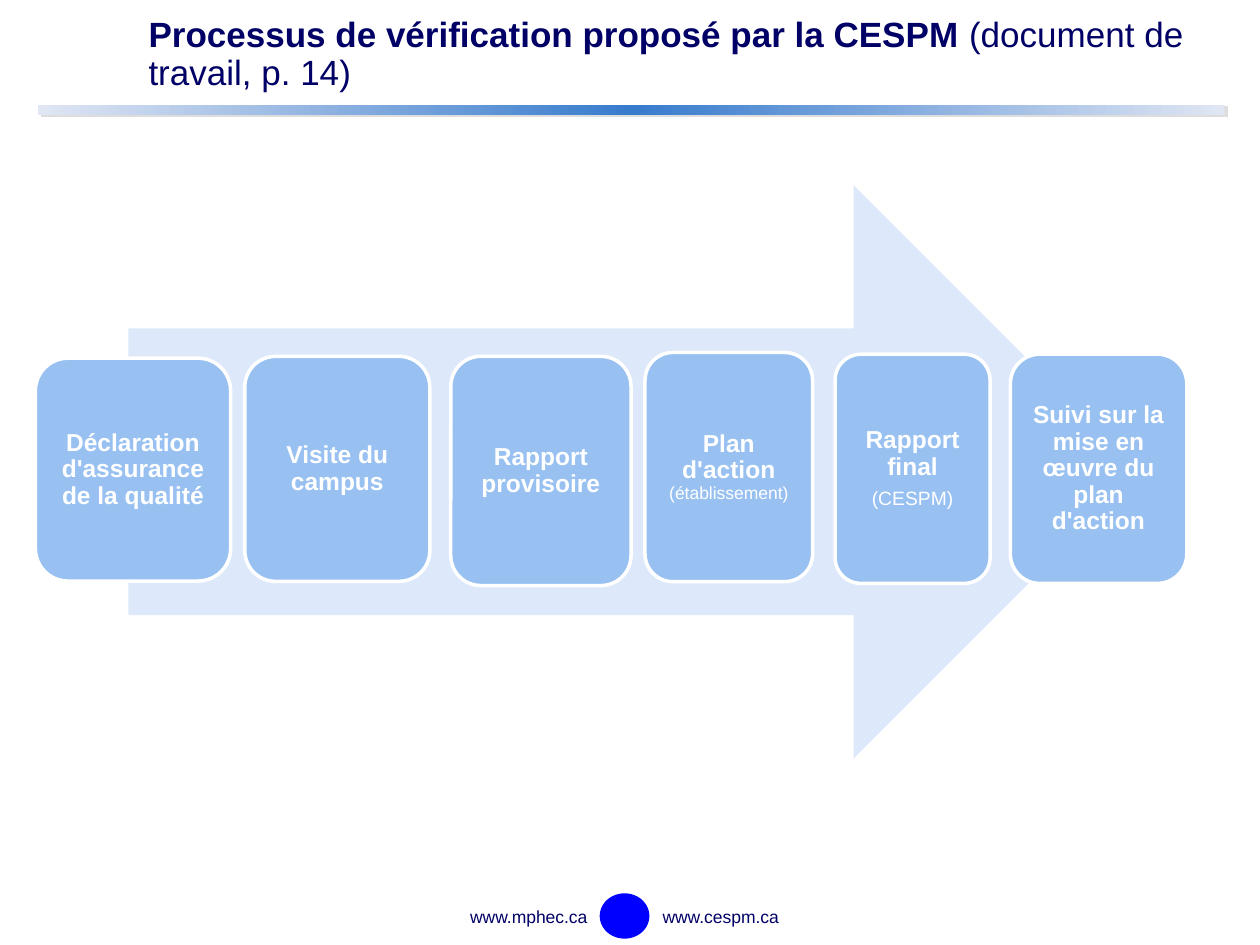
from copy import deepcopy
from dataclasses import dataclass

from lxml.etree import SubElement
from pptx import Presentation
from pptx.dml.color import RGBColor
from pptx.enum.shapes import MSO_SHAPE
from pptx.enum.text import MSO_ANCHOR, PP_ALIGN
from pptx.oxml.ns import qn
from pptx.util import Pt


@dataclass(frozen=True)
class Theme:
    font: str = "Arial"
    navy: str = "000066"
    white: str = "FFFFFF"
    arrow: str = "DDE9FA"
    step: str = "98C1F2"
    emblem: str = "0000FF"
    bar_edge: str = "E0E6F3"
    bar_middle: str = "377BCD"
    bar_shadow: str = "DDDDDD"
    title_size: float = 20
    step_size: float = 14
    note_size: float = 11
    small_size: float = 10


T = Theme()

# Left, top, width, height in points, then paragraphs of (text, size, bold) runs
STEPS = [
    ((20.2, 204.7, 111.6, 127.4),
     [[("Déclaration d'assurance de la qualité", T.step_size, True)]]),
    ((139.9, 203.6, 105.8, 128.6),
     [[("Visite du campus", T.step_size, True)]]),
    ((257.6, 203.6, 103, 131),
     [[("Rapport provisoire", T.step_size, True)]]),
    ((368.6, 201.4, 95.8, 131),
     [[("Plan d'action ", T.step_size, True),
       ("(établissement)", T.small_size, False)]]),
    ((477.2, 202.4, 88.6, 131),
     [[("Rapport final", T.step_size, True)],
      [("(CESPM)", T.note_size, False)]]),
    ((577.4, 202.4, 100.8, 131),
     [[("Suivi sur la mise en œuvre du plan d'action", T.step_size, True)]]),
]


def rgb(value):
    return RGBColor.from_string(value)


def write(tf, paragraphs, color, align=PP_ALIGN.LEFT, spacing=1.0, gap=0):
    """Fill a text frame; gap separates consecutive paragraphs."""
    tf.word_wrap = True
    for i, runs in enumerate(paragraphs):
        p = tf.add_paragraph() if i else tf.paragraphs[0]
        p.alignment = align
        p.line_spacing = spacing
        if i < len(paragraphs) - 1:
            p.space_after = Pt(gap)
        for text, size, bold in runs:
            r = p.add_run()
            r.text = text
            r.font.name = T.font
            r.font.size = Pt(size)
            r.font.bold = bold
            r.font.color.rgb = rgb(color)


def add_text(slide, box, paragraphs, **style):
    s = slide.shapes.add_textbox(*map(Pt, box))
    write(s.text_frame, paragraphs, T.navy, **style)
    return s


def add_block(slide, kind, box, fill, line=None):
    s = slide.shapes.add_shape(kind, *map(Pt, box))
    s.shadow.inherit = False
    s.fill.solid()
    s.fill.fore_color.rgb = rgb(fill)
    if line:
        s.line.color.rgb = rgb(line)
        s.line.width = Pt(2)
    else:
        s.line.fill.background()
    return s


def add_step(slide, box, paragraphs):
    s = add_block(slide, MSO_SHAPE.ROUNDED_RECTANGLE, box, T.step, T.white)
    tf = s.text_frame
    tf.margin_left = tf.margin_right = Pt(4.2)
    tf.margin_top = tf.margin_bottom = Pt(4.2)
    tf.vertical_anchor = MSO_ANCHOR.MIDDLE
    write(tf, paragraphs, T.white, PP_ALIGN.CENTER, 0.9, 5)


def add_gradient_bar(slide, box):
    s = add_block(slide, MSO_SHAPE.RECTANGLE, box, T.bar_middle)
    s.fill.gradient()
    s.fill.gradient_angle = 0
    stops = s.fill.gradient_stops
    for stop, color, position in zip(stops, (T.bar_edge, T.bar_middle), (0, 0.5)):
        stop.color.rgb = rgb(color)
        stop.position = position
    # Third stop mirrors the first
    gs_list = s._element.spPr.find(".//" + qn("a:gsLst"))
    last = deepcopy(gs_list[0])
    last.set("pos", "100000")
    gs_list.append(last)
    # Hard offset shadow
    effects = s._element.spPr.find(qn("a:effectLst"))
    shadow = SubElement(effects, qn("a:outerShdw"), blurRad="0",
                        dist=str(Pt(2.2)), dir=str(27 * 60000),
                        algn="ctr", rotWithShape="0")
    SubElement(shadow, qn("a:srgbClr"), val=T.bar_shadow)


def main():
    prs = Presentation()
    prs.slide_width, prs.slide_height = Pt(720), Pt(540)
    slide = prs.slides.add_slide(prs.slide_layouts[6])

    # Rule under the title
    add_gradient_bar(slide, (21.6, 59.8, 678.2, 5.8))

    # Footer: emblem between the two addresses
    add_block(slide, MSO_SHAPE.OVAL, (342.7, 510.5, 28.4, 25.9), T.emblem)
    add_text(slide, (212.4, 514.1, 130.3, 19.4),
             [[("www.mphec.ca", T.small_size, False)]], align=PP_ALIGN.RIGHT)
    add_text(slide, (371.5, 514.1, 90, 19.4),
             [[("www.cespm.ca", T.small_size, False)]])

    # Title
    title = add_text(slide, (77.8, 2.2, 621.4, 58.3), [[
        ("Processus de vérification proposé par la CESPM ", T.title_size, True),
        ("(document de travail, p. 14)", T.title_size, False),
    ]], spacing=0.9)
    title.text_frame.vertical_anchor = MSO_ANCHOR.MIDDLE

    # Process arrow and its steps
    add_block(slide, MSO_SHAPE.RIGHT_ARROW, (73.4, 105.8, 578.2, 327.6), T.arrow)
    for box, paragraphs in STEPS:
        add_step(slide, box, paragraphs)

    prs.save("out.pptx")


if __name__ == "__main__":
    main()
